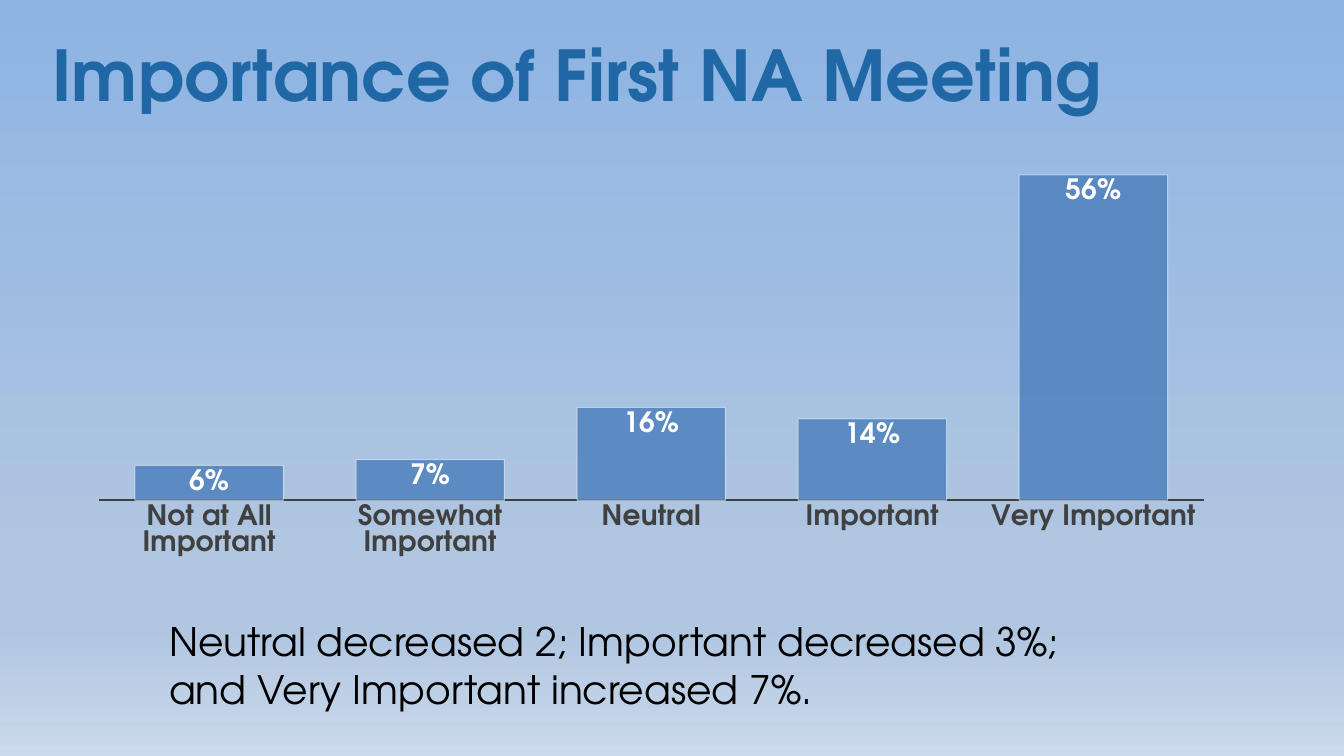
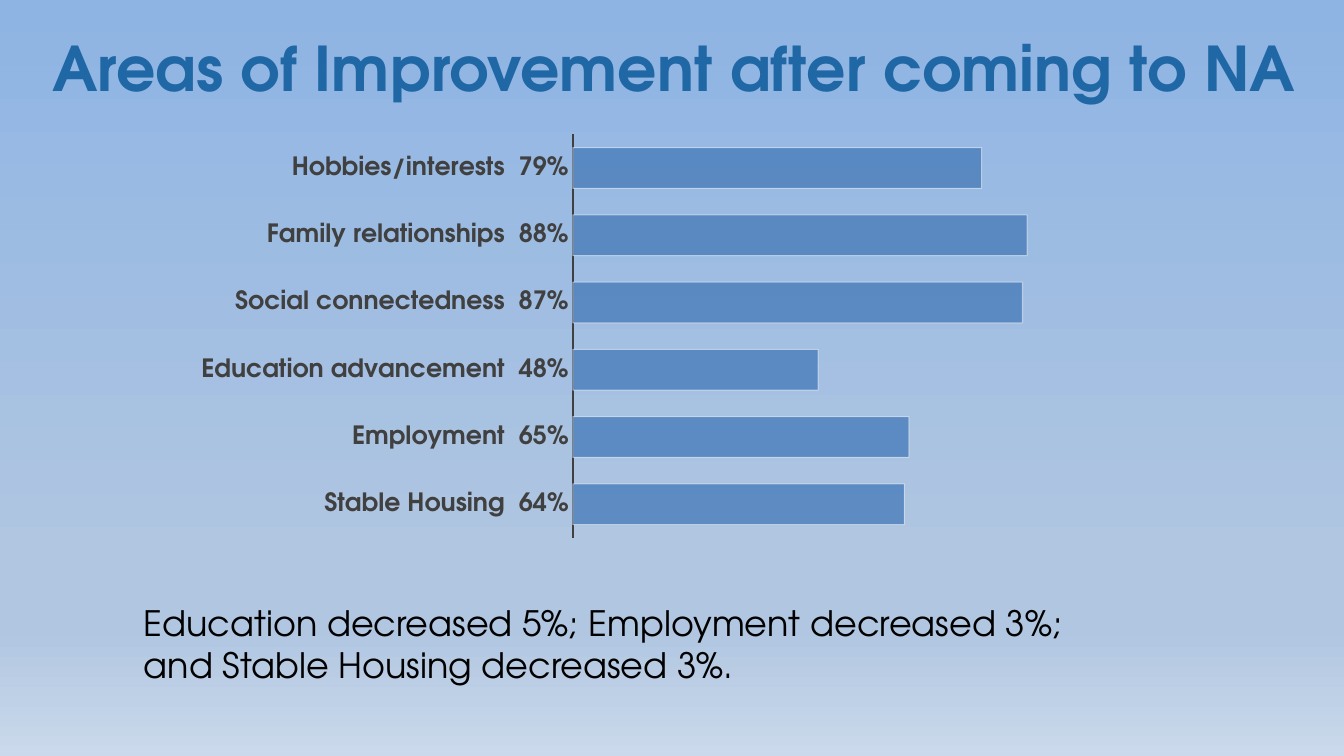
from lxml.etree import SubElement
from pptx import Presentation
from pptx.chart.data import CategoryChartData
from pptx.dml.color import RGBColor
from pptx.enum.chart import XL_CHART_TYPE as ChartType
from pptx.enum.chart import XL_LABEL_POSITION as LabelPosition
from pptx.enum.chart import XL_TICK_LABEL_POSITION as TickLabelPosition
from pptx.enum.chart import XL_TICK_MARK as TickMark
from pptx.enum.text import MSO_ANCHOR as Anchor
from pptx.oxml.ns import qn
from pptx.util import Inches, Pt

FONT = "TeX Gyre Adventor"
TITLE_BLUE = RGBColor(0x20, 0x67, 0xA5)
BAR_BLUE = RGBColor(0x4F, 0x81, 0xBD)
AXIS_GREY = RGBColor(0x40, 0x40, 0x40)
BLACK = RGBColor(0, 0, 0)
WHITE = RGBColor(0xFF, 0xFF, 0xFF)
SKY_STOPS = [
    (0, RGBColor(0x8E, 0xB4, 0xE3)),
    (74, RGBColor(0xB0, 0xC6, 0xE1)),
    (83, RGBColor(0xB0, 0xC6, 0xE1)),
    (100, RGBColor(0xCA, 0xD9, 0xEB)),
]


def paint_background(master):
    fill = master.background.fill
    fill.gradient()
    fill.gradient_angle = 270
    stops = master.element.xpath(".//p:bg//a:gsLst")[0]
    for stop in list(stops):
        stops.remove(stop)
    for percent, color in SKY_STOPS:
        stop = SubElement(stops, qn("a:gs"), pos=str(percent * 1000))
        SubElement(stop, qn("a:srgbClr"), val=str(color))


def style_font(font, size, color, bold=False):
    font.name = FONT
    font.size = Pt(size)
    font.bold = bold
    font.color.rgb = color


def add_text(page, area, text, size, color, bold=False):
    box = page.shapes.add_textbox(*map(Inches, area))
    frame = box.text_frame
    frame.word_wrap = True
    frame.vertical_anchor = Anchor.TOP
    frame.text = text
    for span in frame.paragraphs[0].runs:
        style_font(span.font, size, color, bold)
    return frame


def add_title(page, text, size):
    frame = add_text(page, (0.42, 0.25, 12.58, 1.25), text, size, TITLE_BLUE, True)
    frame.margin_top = 0
    para = frame.paragraphs[0]
    para.line_spacing = 1.07
    para.space_after = Pt(8)


def set_alpha(series, part, percent):
    color = series.format.element.xpath(f"c:spPr/{part}/a:srgbClr")[0]
    SubElement(color, qn("a:alpha"), val=str(percent * 1000))


def style_bars(series):
    series.format.fill.solid()
    series.format.fill.fore_color.rgb = BAR_BLUE
    line = series.format.line
    line.width = Pt(0.75)
    line.color.rgb = WHITE
    set_alpha(series, "a:solidFill", 85)
    set_alpha(series, "a:ln/a:solidFill", 50)


def place_plot(chart, area):
    plot_area = chart.element.xpath(".//c:plotArea")[0]
    for layout in plot_area.findall(qn("c:layout")):
        plot_area.remove(layout)
    layout = SubElement(plot_area, qn("c:layout"))
    plot_area.insert(0, layout)
    manual = SubElement(layout, qn("c:manualLayout"))
    SubElement(manual, qn("c:layoutTarget"), val="inner")
    for mode in ("xMode", "yMode"):
        SubElement(manual, qn(f"c:{mode}"), val="edge")
    for name, share in zip("xywh", area):
        SubElement(manual, qn(f"c:{name}"), val=str(share))


def add_bars(page, kind, area, plot_share, bars, maximum, gap, label_size):
    data = CategoryChartData(number_format="0%")
    data.categories = list(bars)
    data.add_series("Series 1", list(bars.values()))
    chart = page.shapes.add_chart(kind, *map(Inches, area), data).chart
    chart.has_legend = False
    chart.has_title = False
    chart.font.name = "Calibri"
    chart.font.size = Pt(10)
    place_plot(chart, plot_share)

    category_axis = chart.category_axis
    category_axis.has_major_gridlines = False
    category_axis.major_tick_mark = TickMark.NONE
    category_axis.minor_tick_mark = TickMark.NONE
    category_axis.tick_label_position = TickLabelPosition.NEXT_TO_AXIS
    category_axis.format.line.width = Pt(1.5)
    category_axis.format.line.color.rgb = AXIS_GREY
    style_font(category_axis.tick_labels.font, label_size, AXIS_GREY, True)

    value_axis = chart.value_axis
    value_axis.minimum_scale = 0
    value_axis.maximum_scale = maximum
    value_axis.has_major_gridlines = False
    value_axis.visible = False

    plot = chart.plots[0]
    plot.gap_width = gap
    plot.vary_by_categories = False
    style_bars(plot.series[0])
    return plot


def add_value_labels(plot):
    plot.has_data_labels = True
    labels = plot.data_labels
    labels.show_value = True
    labels.position = LabelPosition.INSIDE_END
    labels.number_format = "0%"
    labels.number_format_is_linked = False
    style_font(labels.font, 20, WHITE, True)


def build_importance(page):
    ratings = {
        "Not at All Important": 0.06,
        "Somewhat Important": 0.07,
        "Neutral": 0.16,
        "Important": 0.14,
        "Very Important": 0.56,
    }
    add_text(
        page,
        (1.58, 6.08, 10.08, 1.04),
        "Neutral decreased 2; Important decreased 3%;\vand Very Important increased 7%.",
        28,
        BLACK,
    )
    add_title(page, "Importance of First NA Meeting", 50)
    plot = add_bars(
        page, ChartType.COLUMN_CLUSTERED, (0.75, 1.42, 11.42, 4.17),
        (0.02, 0.02, 0.96, 0.83), ratings, 0.6, 49, 20,
    )
    add_value_labels(plot)


def build_improvement(page):
    improvements = {
        "Stable Housing  64%": 73,
        "Employment  65%": 74,
        "Education advancement  48%": 54,
        "Social connectedness  87%": 99,
        "Family relationships  88%": 100,
        "Hobbies/interests  79%": 90,
    }
    add_text(
        page,
        (1.33, 5.92, 12, 1.36),
        "Education decreased 5%; Employment decreased 3%;\vand Stable Housing decreased 3%.",
        25,
        BLACK,
    )
    add_title(page, "Areas of Improvement after coming to NA", 44)
    add_bars(
        page, ChartType.BAR_CLUSTERED, (1.83, 1.25, 9.17, 4.17),
        (0.42, 0.02, 0.57, 0.96), improvements, 116, 65, 18,
    )


def main():
    deck = Presentation()
    deck.slide_width = Inches(13.33)
    deck.slide_height = Inches(7.5)
    paint_background(deck.slide_master)
    blank = deck.slide_layouts[6]
    for build in (build_importance, build_improvement):
        build(deck.slides.add_slide(blank))
    deck.save("out.pptx")


if __name__ == "__main__":
    main()
